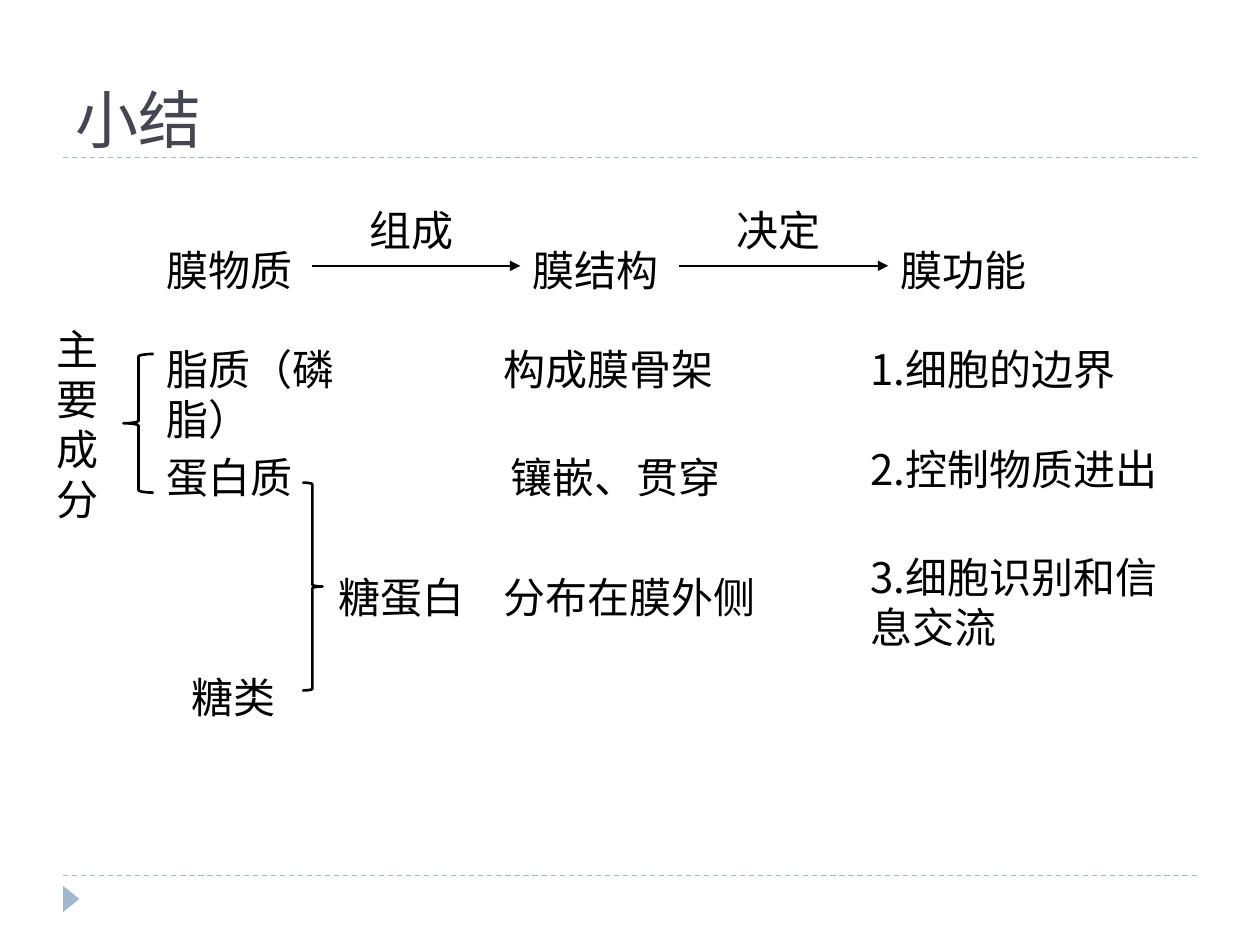
from lxml import etree
from pptx import Presentation
from pptx import util as u
from pptx.dml.color import RGBColor
from pptx.enum import dml, shapes, text
from pptx.oxml.ns import qn

BLACK = RGBColor(0x00, 0x00, 0x00)
TITLE_COLOR = RGBColor(0x46, 0x46, 0x53)
ACCENT = RGBColor(0x9F, 0xB8, 0xCD)
FONT = "Noto Sans CJK SC"
LEFT, CENTER = text.PP_ALIGN.LEFT, text.PP_ALIGN.CENTER

presentation = Presentation()
presentation.slide_width, presentation.slide_height = u.Inches(10), u.Inches(7.5)
slide = presentation.slides.add_slide(presentation.slide_layouts[5])


def write(shape, words, size, color, alignment):
    paragraph = shape.text_frame.paragraphs[0]
    paragraph.alignment = alignment
    run = paragraph.add_run()
    run.text = words
    run.font.size = u.Pt(size)
    run.font.name = FONT
    run.font.color.rgb = color
    etree.SubElement(run.font._element, qn("a:ea")).set("typeface", FONT)
    return paragraph


def draw_line(start, end, y, color, width):
    line = slide.shapes.add_connector(
        shapes.MSO_CONNECTOR.STRAIGHT, *map(u.Inches, (start, y, end, y)))
    line.line.color.rgb = color
    line.line.width = u.Pt(width)
    etree.SubElement(line._element.spPr, qn("a:effectLst"))
    return line


MARGIN = 0.5
for rule_y in (6.95, 1.25):
    rule = draw_line(MARGIN, 10 - MARGIN, rule_y, ACCENT, 0.75)
    rule.line.dash_style = dml.MSO_LINE.DASH

marker = slide.shapes.add_shape(
    shapes.MSO_SHAPE.ISOSCELES_TRIANGLE, *map(u.Inches, (0.46, 7.07, 0.21, 0.13)))
marker.rotation = 90
marker.shadow.inherit = False
marker.fill.solid()
marker.fill.fore_color.rgb = ACCENT
marker.line.fill.background()

title = slide.shapes.title
title.left, title.top, title.width, title.height = map(u.Inches, (MARGIN, 0.17, 9, 1.08))
title.text_frame.vertical_anchor = text.MSO_ANCHOR.BOTTOM
title.text_frame.auto_size = text.MSO_AUTO_SIZE.NONE
title.text_frame.margin_bottom = u.Inches(0.01)
write(title, "小结", 36, TITLE_COLOR, LEFT)

SUBSTANCE, STRUCTURE, FUNCTION = 1.22, 3.9, 6.81
HEADINGS = (1.22, 4.13, 7.05)
HEADING_WIDTH = 1.26
LABEL_ROW, HEADING_ROW, LIPID_ROW, PROTEIN_ROW, GLYCO_ROW, SUGAR_ROW = (
    1.55, 1.86, 2.65, 3.51, 4.46, 5.25)
ROW_HEIGHT = 0.5

labels = [
    ("脂质（磷脂）", SUBSTANCE, LIPID_ROW, 1.89, LEFT),
    ("蛋白质", SUBSTANCE, PROTEIN_ROW, HEADING_WIDTH, LEFT),
    ("糖类", SUBSTANCE, SUGAR_ROW, HEADING_WIDTH, CENTER),
    ("构成膜骨架", STRUCTURE, LIPID_ROW, 1.97, LEFT),
    ("镶嵌、贯穿", STRUCTURE, PROTEIN_ROW, 1.97, CENTER),
    ("主要成分", 0.35, 2.49, 0.71, LEFT),
    ("分布在膜外侧", STRUCTURE, GLYCO_ROW, 2.36, LEFT),
    ("糖蛋白", 2.56, GLYCO_ROW, HEADING_WIDTH, CENTER),
    ("1.细胞的边界", FUNCTION, LIPID_ROW, 2.2, LEFT),
    ("2.控制物质进出", FUNCTION, 3.44, 2.76, LEFT),
    ("3.细胞识别和信息交流", FUNCTION, 4.3, 2.6, LEFT),
]
for words, left in zip(("膜物质", "膜结构", "膜功能"), HEADINGS):
    labels.append((words, left, HEADING_ROW, HEADING_WIDTH, LEFT))

for words, left, following in zip(("组成", "决定"), HEADINGS, HEADINGS[1:]):
    start = left + HEADING_WIDTH
    labels.append((words, start, LABEL_ROW, 1.57, CENTER))
    arrow = draw_line(start, following, HEADING_ROW + ROW_HEIGHT / 2, BLACK, 1.5)
    etree.SubElement(arrow.line._get_or_add_ln(), qn("a:tailEnd")).set("type", "triangle")

for words, left, top, width, alignment in labels:
    box = slide.shapes.add_textbox(*map(u.Inches, (left, top, width, ROW_HEIGHT)))
    box.text_frame.word_wrap = True
    box.text_frame.auto_size = text.MSO_AUTO_SIZE.SHAPE_TO_FIT_TEXT
    box.text_frame.margin_top = u.Inches(0.08)
    box.text_frame.margin_bottom = u.Inches(0.02)
    write(box, words, 24, BLACK, alignment).line_spacing = u.Pt(28.6)

for kind, *place in (
    (shapes.MSO_SHAPE.LEFT_BRACE, 0.98, 2.81, 0.24, 1.1),
    (shapes.MSO_SHAPE.RIGHT_BRACE, 2.4, 3.83, 0.16, 1.65),
):
    brace = slide.shapes.add_shape(kind, *map(u.Inches, place))
    brace.shadow.inherit = False
    brace.fill.background()
    brace.line.color.rgb = BLACK
    brace.line.width = u.Pt(1.5)

presentation.save("out.pptx")
